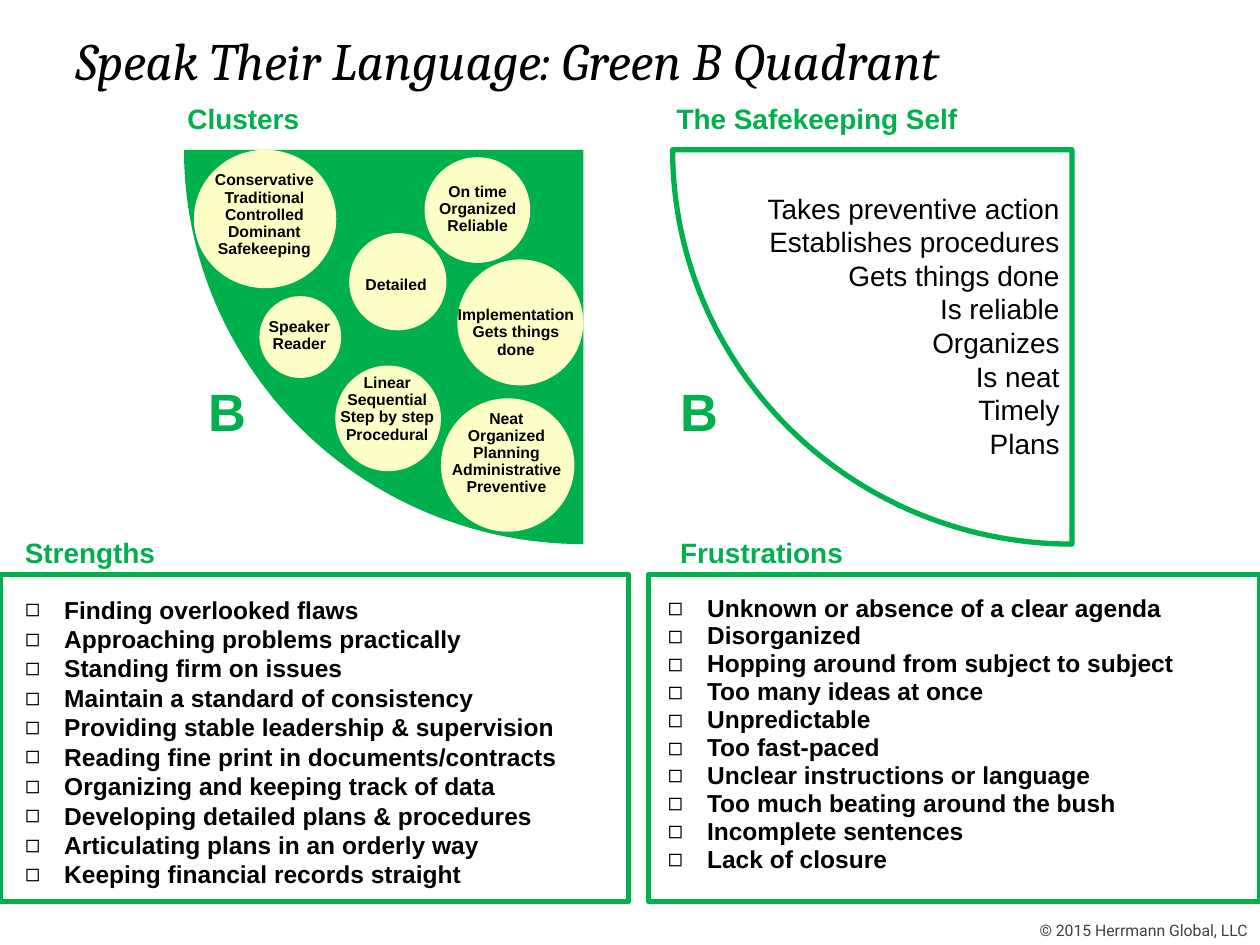
from math import cos, pi, sin

from lxml.etree import SubElement
from pptx import Presentation
from pptx.dml.color import RGBColor
from pptx.enum.shapes import MSO_SHAPE as Shape
from pptx.enum.text import MSO_ANCHOR as Anchor, MSO_AUTO_SIZE as AutoSize, PP_ALIGN as Align
from pptx.oxml.ns import qn
from pptx.util import Cm, Pt

GREEN, CREAM, BLACK, GREY = "00B04C", "FDFFC7", "000000", "414042"
QUADRANT_WIDTH, QUADRANT_HEIGHT = 8.05, 7.95

CLUSTERS = [
    ((0.2, 0, 2.87, 2.79), (0.35, 0.33, 2.54, 2.06), False,
     "Conservative\nTraditional\nControlled\nDominant\nSafekeeping"),
    ((4.85, 0.15, 2.13, 2.13), (4.88, 0.56, 2.08, 1.3), False, "On time\nOrganized\nReliable"),
    ((3.33, 1.68, 1.96, 1.96), (3.4, 2.44, 1.75, 0.61), False, "Detailed"),
    ((5.51, 2.21, 2.54, 2.54), (5.18, 3.05, 3.02, 1.3), True, "Implementation\nGets things done"),
    ((1.52, 2.95, 1.65, 1.65), (1.45, 3.28, 1.75, 0.94), False, "Speaker\nReader"),
    ((3.05, 4.35, 2.13, 2.13), (2.89, 4.42, 2.41, 1.68), False,
     "Linear\nSequential\nStep by step\nProcedural"),
    ((5.18, 5.01, 2.69, 2.69), (5.08, 5.13, 2.84, 2.06), False,
     "Neat\nOrganized\nPlanning\nAdministrative\nPreventive"),
]
SAFEKEEPING = ("Takes preventive action\nEstablishes procedures\nGets things done\n"
               "Is reliable\nOrganizes\nIs neat\nTimely\nPlans")
STRENGTHS = """Finding overlooked flaws
Approaching problems practically
Standing firm on issues
Maintain a standard of consistency
Providing stable leadership & supervision
Reading fine print in documents/contracts
Organizing and keeping track of data
Developing detailed plans & procedures
Articulating plans in an orderly way
Keeping financial records straight"""
FRUSTRATIONS = """Unknown or absence of a clear agenda
Disorganized
Hopping around from subject to subject
Too many ideas at once
Unpredictable
Too fast-paced
Unclear instructions or language
Too much beating around the bush
Incomplete sentences
Lack of closure"""


def color(value):
    return RGBColor.from_string(value)


def place(shape, box):
    shape.left, shape.top, shape.width, shape.height = map(Cm, box)


def paint(shape, fill=None, line=None):
    shape.shadow.inherit = False
    if fill:
        shape.fill.solid()
        shape.fill.fore_color.rgb = color(fill)
    else:
        shape.fill.background()
    if line:
        shape.line.color.rgb = color(line)
        shape.line.width = Pt(3)
    else:
        shape.line.fill.background()


def style(paragraph, size, value=BLACK, bold=False, italic=False, name="Arial"):
    font = paragraph.font
    font.name, font.size, font.bold, font.italic = name, Pt(size), bold, italic
    font.color.rgb = color(value)


def add_text(slide, box, text, size, value=BLACK, bold=False, align=Align.LEFT,
             spacing=None, wrap=False, name="Arial"):
    frame = slide.shapes.add_textbox(*map(Cm, box)).text_frame
    frame.word_wrap = wrap
    frame.text = text
    for paragraph in frame.paragraphs:
        paragraph.alignment = align
        paragraph.line_spacing = spacing
        style(paragraph, size, value, bold, name=name)


def add_heading(slide, box, text, size=16):
    add_text(slide, box, text, size, GREEN, bold=True)


def add_title(slide, box, text):
    title = slide.shapes.title
    place(title, box)
    frame = title.text_frame
    frame.text = text
    frame.vertical_anchor = Anchor.TOP
    frame.auto_size = AutoSize.NONE
    paragraph = frame.paragraphs[0]
    paragraph.alignment = Align.LEFT
    style(paragraph, 30, italic=True, name="Cambria")


def add_quadrant(slide, left, top, fill=None, line=None):
    steps = 60
    right = left + QUADRANT_WIDTH
    arc = [(Cm(right - QUADRANT_WIDTH * cos(step * pi / 2 / steps)),
            Cm(top + QUADRANT_HEIGHT * sin(step * pi / 2 / steps)))
           for step in range(steps + 1)]
    builder = slide.shapes.build_freeform(Cm(right), Cm(top))
    builder.add_line_segments(arc, close=True)
    paint(builder.convert_to_shape(), fill, line)


def add_clusters(slide, left, top):
    add_heading(slide, (left - 0.18, top - 1.09, 2.79, 0.94), "Clusters")
    add_quadrant(slide, left, top, fill=GREEN)
    for (x, y, width, height), _, _, _ in CLUSTERS:
        circle = slide.shapes.add_shape(
            Shape.OVAL, Cm(left + x), Cm(top + y), Cm(width), Cm(height))
        paint(circle, CREAM)
    for _, (x, y, width, height), wrap, text in CLUSTERS:
        add_text(slide, (left + x, top + y, width, height), text, 9, bold=True,
                 align=Align.CENTER, spacing=0.9, wrap=wrap)
    add_heading(slide, (left + 0.25, top + 4.5, 1.3, 1.55), "B", 30)


def add_safekeeping_self(slide, left, top):
    add_heading(slide, (left - 0.17, top - 1.09, 6.25, 0.94), "The Safekeeping Self")
    add_quadrant(slide, left, top, line=GREEN)
    add_text(slide, (left + 0.28, top + 0.71, 7.77, 5.84), SAFEKEEPING, 16,
             align=Align.RIGHT, wrap=True)
    add_heading(slide, (left - 0.1, top + 4.5, 1.3, 1.55), "B", 30)


def add_bullet(paragraph):
    properties = paragraph._p.get_or_add_pPr()
    properties.set("marL", str(Cm(0.79)))
    properties.set("indent", str(-Cm(0.79)))
    SubElement(properties, qn("a:buChar")).set("char", "◻")


def add_list_panel(slide, box, heading, heading_box, body, body_box, items, spacing):
    left, top, width, height = box
    frame_shape = slide.shapes.add_shape(Shape.RECTANGLE, *map(Cm, box))
    paint(frame_shape, line=GREEN)
    x, y, heading_width, heading_height = heading_box
    add_heading(slide, (left + x, top + y, heading_width, heading_height), heading)
    x, y, body_width, body_height = body_box
    place(body, (left + x, top + y, body_width, body_height))
    frame = body.text_frame
    frame.text = items
    frame.auto_size = AutoSize.NONE
    for paragraph in frame.paragraphs:
        add_bullet(paragraph)
        paragraph.space_before = Pt(0)
        paragraph.line_spacing = spacing
        style(paragraph, 14, bold=True)


def main():
    presentation = Presentation()
    presentation.slide_width, presentation.slide_height = Cm(25.4), Cm(19.05)
    slide = presentation.slides.add_slide(presentation.slide_layouts[3])
    strengths, frustrations = slide.placeholders[1], slide.placeholders[2]

    add_title(slide, (1.27, 0.43, 22.86, 2.36), "Speak Their Language: Green B Quadrant")
    add_clusters(slide, 3.71, 3.02)
    add_safekeeping_self(slide, 13.56, 3.02)
    add_list_panel(slide, (0, 11.58, 12.67, 6.6), "Strengths", (0.25, -0.91, 3.18, 0.94),
                   strengths, (0.25, 0.28, 13.16, 6.25), STRENGTHS, 1.0)
    add_list_panel(slide, (13.08, 11.58, 12.32, 6.6), "Frustrations", (0.38, -0.91, 3.84, 0.94),
                   frustrations, (0.13, 0.28, 12.7, 5.94), FRUSTRATIONS, 0.95)
    add_text(slide, (20.6, 18.44, 4.8, 0.61), "© 2015 Herrmann Global, LLC", 9, GREY,
             align=Align.RIGHT, name="Roboto")
    presentation.save("out.pptx")


if __name__ == "__main__":
    main()
